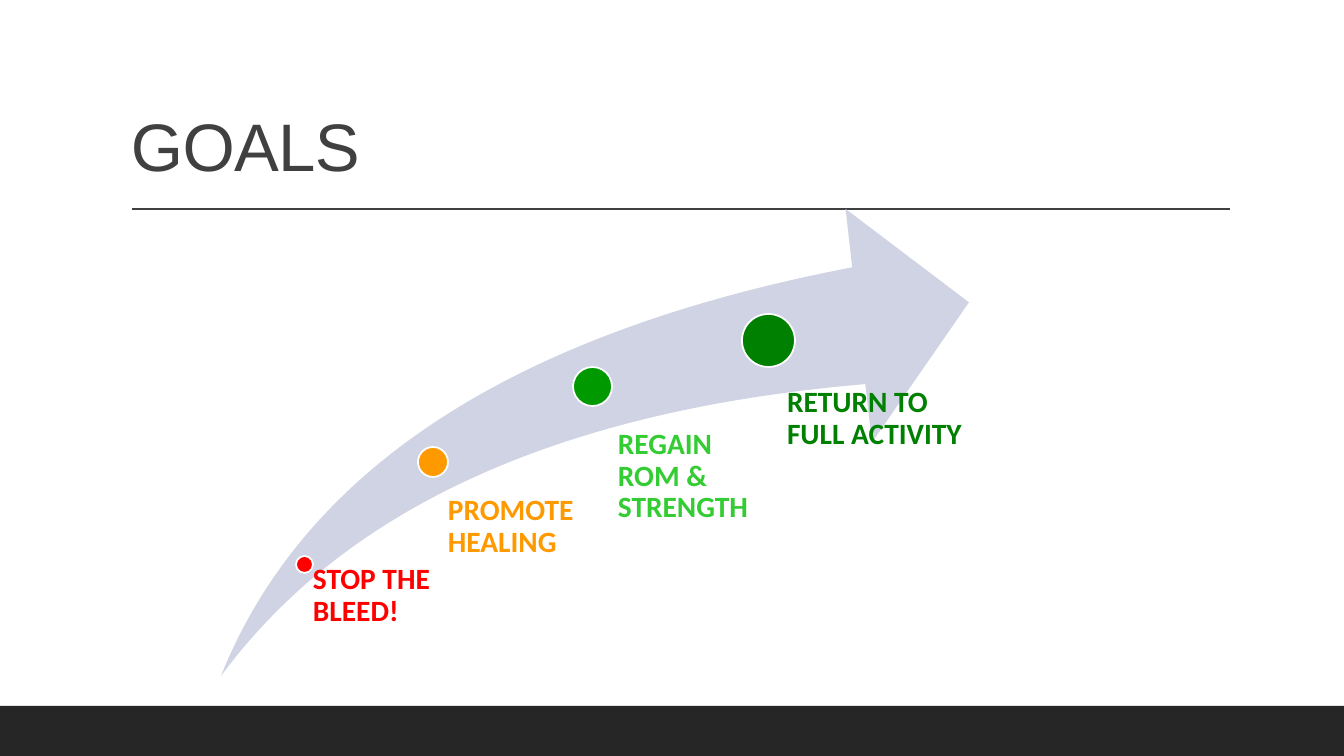
from lxml import etree
from pptx import Presentation
from pptx import util as u
from pptx.dml.color import RGBColor
from pptx.enum import shapes, text
from pptx.oxml.ns import qn

PX = 914400 / 100.8
COLORS = {
    "white": "FFFFFF", "dark": "404040", "footer": "262626", "arrow": "D0D3E3",
    "red": "FF0000", "orange": "FF9900", "green": "009900",
    "lime": "33CC33", "forest": "008000",
}


def emu(px):
    return u.Emu(round(px * PX))


def rgb(name):
    return RGBColor.from_string(COLORS[name])


class SlideBuilder:
    """Holds the slide and its style, and draws each kind of element."""

    def __init__(self, presentation):
        self.slide = presentation.slides.add_slide(presentation.slide_layouts[6])
        self.slide.background.fill.solid()
        self.slide.background.fill.fore_color.rgb = rgb("white")

    def shape(self, kind, box, fill, outline=None, adjustments=()):
        shape = self.slide.shapes.add_shape(kind, *map(emu, box))
        shape.shadow.inherit = False
        shape.fill.solid()
        shape.fill.fore_color.rgb = rgb(fill)
        if outline:
            shape.line.color.rgb = rgb(outline)
            shape.line.width = u.Pt(1.25)
        else:
            shape.line.fill.background()
        for index, value in enumerate(adjustments):
            shape.adjustments[index] = value

    def line(self, start, end, color):
        connector = self.slide.shapes.add_connector(
            shapes.MSO_CONNECTOR.STRAIGHT, *map(emu, (*start, *end)))
        connector.line.color.rgb = rgb(color)
        connector.line.width = u.Pt(1)
        etree.SubElement(connector._element.spPr, qn("a:effectLst"))

    def text(self, box, words, color, insets, font, anchor="TOP", spacing=0):
        frame = self.slide.shapes.add_textbox(*map(emu, box)).text_frame
        frame.word_wrap = True
        frame.vertical_anchor = text.MSO_ANCHOR[anchor]
        for side, inset in zip(("left", "top", "right", "bottom"), insets):
            setattr(frame, f"margin_{side}", emu(inset))
        paragraph = frame.paragraphs[0]
        paragraph.line_spacing = 0.9
        run = paragraph.add_run()
        run.text = words
        for name, value in font.items():
            setattr(run.font, name, value)
        run.font.color.rgb = rgb(color)
        if spacing:
            run._r.get_or_add_rPr().set("spc", str(spacing))


def main():
    presentation = Presentation()
    presentation.slide_width = emu(1344)
    presentation.slide_height = emu(756)
    builder = SlideBuilder(presentation)
    kinds = shapes.MSO_SHAPE

    # Footer band and title rule
    builder.shape(kinds.RECTANGLE, (0, 706, 1344, 50), "footer")
    builder.line((132, 209), (1230, 209), "dark")

    # Title
    builder.text((121, 31, 1109, 160), "GOALS", "dark", (10, 5, 10, 5),
                 {"name": "Arial", "size": u.Pt(48)}, "BOTTOM", -50)

    # Rising arrow
    builder.shape(kinds.SWOOSH_ARROW, (221, 209, 748, 467), "arrow",
                  adjustments=(0.25, 0.25))

    # Goals: dot (left, top, diameter), dot colour, label box, inset, colour, words
    goals = [
        ((296, 556, 17), "red", (304, 564, 128, 111), 9, "red", "STOP THE BLEED!"),
        ((418, 447, 30), "orange", (432, 495, 157, 181), 16, "orange",
         "PROMOTE HEALING"),
        ((573, 367, 39), "green", (597, 429, 157, 243), 21, "lime",
         "REGAIN ROM & STRENGTH"),
        ((742, 314, 53), "forest", (759, 387, 203, 205), 28, "forest",
         "RETURN TO FULL ACTIVITY"),
    ]
    label_font = {"name": "Calibri", "size": u.Pt(21), "bold": True}
    for (left, top, size), fill, box, inset, color, words in goals:
        builder.shape(kinds.OVAL, (left, top, size, size), fill, "white")
        builder.text(box, words, color, (inset, 0, 0, 0), label_font)

    presentation.save("out.pptx")


if __name__ == "__main__":
    main()
